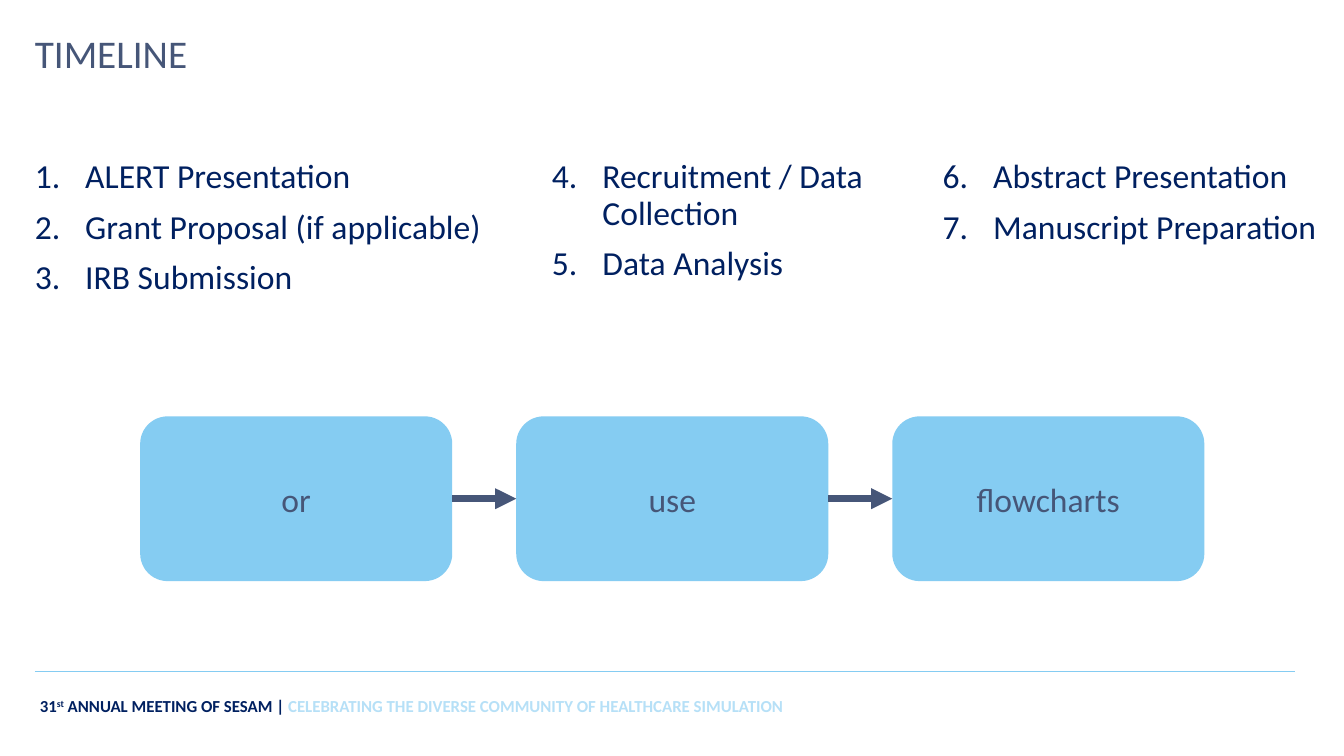
import pptx
import pptx.util
import pptx.dml.color
import pptx.enum.shapes
import pptx.enum.text
import pptx.oxml
import pptx.oxml.ns

WIDTH, HEIGHT = 26.66, 15
FONT = "Calibri"
COLOURS = {"navy": "002060", "slate": "465678", "sky": "85CCF2", "pale": "B6E0F7"}

# Positions are percentages of the slide's width and height.
MARGIN = 2.59
LIST_TOP, LIST_HEIGHT = 21.13, 66.33
STEP_LEFT, STEP_TOP, STEP_WIDTH, STEP_HEIGHT = 10.43, 55.07, 23.22, 21.8
STEP_PITCH = 27.98
RULE_TOP, RULE_RIGHT = 88.8, 96.32

# Each list: left, width, items; numbering runs on from list to list.
LISTS = [
    (MARGIN, 94.82, ["ALERT Presentation", "Grant Proposal (if applicable)",
                     "IRB Submission"]),
    (41.07, 29.86, ["Recruitment / Data Collection", "Data Analysis"]),
    (70.14, 29.86, ["Abstract Presentation", "Manuscript Preparation"]),
]
STEPS = ["or", "use", "flowcharts"]


def across(percent):
    return pptx.util.Inches(WIDTH * percent / 100)


def down(percent):
    return pptx.util.Inches(HEIGHT * percent / 100)


def area(left, top, width, height):
    return across(left), down(top), across(width), down(height)


def rgb(name):
    return pptx.dml.color.RGBColor.from_string(COLOURS[name])


def format_run(span, size, colour, bold=False):
    span.font.name = FONT
    span.font.size = pptx.util.Pt(size)
    span.font.bold = bold
    span.font.color.rgb = rgb(colour)


def fill_placeholder(box, place, lines, size, colour):
    """Move a placeholder, drop its insets and give it one paragraph a line."""
    box.left, box.top, box.width, box.height = place
    frame = box.text_frame
    frame.margin_left = frame.margin_right = 0
    frame.margin_top = frame.margin_bottom = 0
    frame.vertical_anchor = pptx.enum.text.MSO_ANCHOR.TOP
    frame.auto_size = pptx.enum.text.MSO_AUTO_SIZE.NONE
    frame.word_wrap = True
    frame.text = "\n".join(lines)
    for para in frame.paragraphs:
        para.alignment = pptx.enum.text.PP_ALIGN.LEFT
        para.line_spacing = 0.9
        para.space_before = pptx.util.Pt(0)
        format_run(para.runs[0], size, colour)


def number_paragraphs(box, start):
    """Number the paragraphs from start, with a one-inch hanging indent."""
    indent = pptx.util.Inches(1)
    for index, para in enumerate(box.text_frame.paragraphs):
        para.space_before = pptx.util.Pt(20 if index else 0)
        properties = para._p.get_or_add_pPr()
        properties.set("marL", str(indent))
        properties.set("indent", str(-indent))
        number = pptx.oxml.parse_xml(
            f'<a:buAutoNum {pptx.oxml.ns.nsdecls("a")} '
            f'type="arabicPeriod" startAt="{start}"/>')
        properties.append(number)


def add_line(page, begin, end, colour, width):
    line = page.shapes.add_connector(
        pptx.enum.shapes.MSO_CONNECTOR.STRAIGHT, *begin, *end)
    line.line.color.rgb = rgb(colour)
    line.line.width = pptx.util.Pt(width)
    line._element.spPr.append(pptx.oxml.parse_xml(
        f'<a:effectLst {pptx.oxml.ns.nsdecls("a")}/>'))
    return line


def add_step(page, column, label):
    box = page.shapes.add_shape(
        pptx.enum.shapes.MSO_SHAPE.ROUNDED_RECTANGLE,
        *area(STEP_LEFT + column * STEP_PITCH, STEP_TOP, STEP_WIDTH, STEP_HEIGHT))
    box.shadow.inherit = False
    box.fill.solid()
    box.fill.fore_color.rgb = rgb("sky")
    box.line.fill.background()
    box.text_frame.text = label
    box.text_frame.vertical_anchor = pptx.enum.text.MSO_ANCHOR.MIDDLE
    para = box.text_frame.paragraphs[0]
    para.alignment = pptx.enum.text.PP_ALIGN.CENTER
    format_run(para.runs[0], 48, "slate")
    return box


def add_arrow(page, source, target):
    middle = source.top + source.height // 2
    arrow = add_line(page, (source.left + source.width, middle),
                     (target.left, middle), "slate", 10)
    arrow.begin_connect(source, 3)
    arrow.end_connect(target, 1)
    arrow.line._get_or_add_ln().append(pptx.oxml.parse_xml(
        f'<a:tailEnd {pptx.oxml.ns.nsdecls("a")} type="triangle"/>'))


def add_footer(page):
    add_line(page, (across(MARGIN), down(RULE_TOP)),
             (across(RULE_RIGHT), down(RULE_TOP)), "sky", 0.5)
    box = page.shapes.add_textbox(*area(MARGIN, 91.67, 76.48, 3.33))
    box.text_frame.word_wrap = True
    para = box.text_frame.paragraphs[0]
    for text, colour, baseline in [
            ("31", "navy", 0),
            ("st", "navy", 30000),
            (" ANNUAL MEETING OF SESAM | ", "navy", 0),
            ("CELEBRATING THE DIVERSE COMMUNITY OF HEALTHCARE SIMULATION", "pale", 0)]:
        span = para.add_run()
        span.text = text
        format_run(span, 24, colour, bold=True)
        if baseline:
            span._r.get_or_add_rPr().set("baseline", str(baseline))


def main():
    deck = pptx.Presentation()
    deck.slide_width = pptx.util.Inches(WIDTH)
    deck.slide_height = pptx.util.Inches(HEIGHT)
    page = deck.slides.add_slide(deck.slide_layouts.get_by_name("Comparison"))
    title, *bodies = page.placeholders

    fill_placeholder(title, area(MARGIN, 4.6, 94.82, 11.87), ["TIMELINE"], 56, "slate")
    start = 1
    for body, (left, width, items) in zip(bodies, LISTS):
        fill_placeholder(body, area(left, LIST_TOP, width, LIST_HEIGHT),
                         items, 48, "navy")
        number_paragraphs(body, start)
        start += len(items)
    for unused in bodies[len(LISTS):]:
        unused._element.getparent().remove(unused._element)

    steps = [add_step(page, column, label) for column, label in enumerate(STEPS)]
    for source, target in zip(steps, steps[1:]):
        add_arrow(page, source, target)
    add_footer(page)
    deck.save("out.pptx")


if __name__ == "__main__":
    main()
